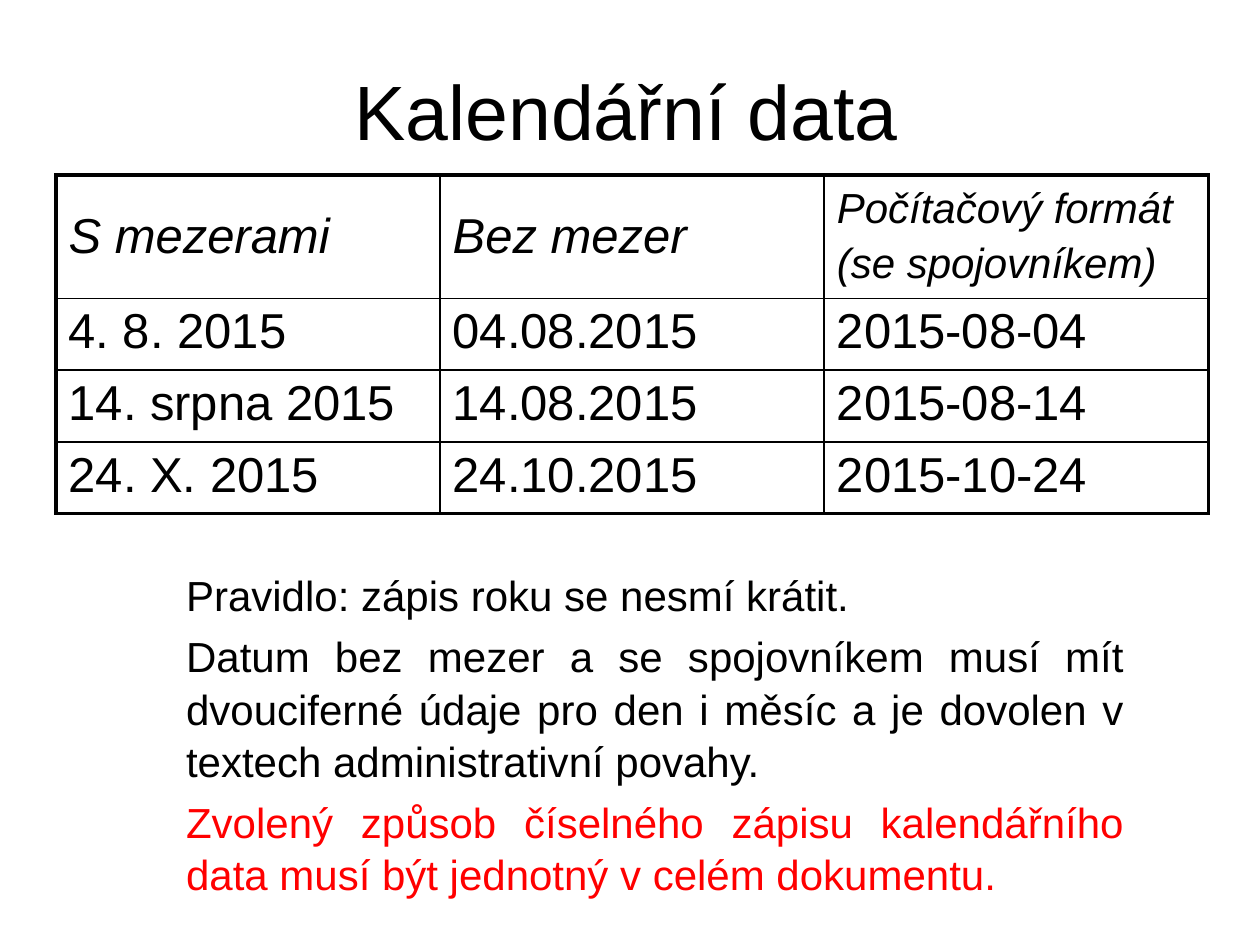
from pptx import Presentation
from pptx.dml.color import RGBColor
from pptx.enum.text import MSO_ANCHOR as Anchor, PP_ALIGN as Align
from pptx.oxml import parse_xml
from pptx.oxml.ns import nsdecls
from pptx.util import Pt

FONT = "Arial"
BLACK, RED = "000000", "FF0000"
THIN, THICK = 1, 2.25

HEADINGS = ["S mezerami", "Bez mezer", "Počítačový formát\n(se spojovníkem)"]
DATES = [
    ["4. 8. 2015", "04.08.2015", "2015-08-04"],
    ["14. srpna 2015", "14.08.2015", "2015-08-14"],
    ["24. X. 2015", "24.10.2015", "2015-10-24"],
]
RULES = [
    ("Pravidlo: zápis roku se nesmí krátit.", BLACK),
    ("Datum bez mezer a se spojovníkem musí mít dvouciferné údaje pro den "
     "i měsíc a je dovolen v textech administrativní povahy.", BLACK),
    ("Zvolený způsob číselného zápisu kalendářního data musí být jednotný "
     "v celém dokumentu.", RED),
]


def rgb(color):
    return RGBColor.from_string(color)


def style(paragraph, size, color=BLACK, align=Align.LEFT, italic=False, first=True):
    paragraph.alignment = align
    if not first:
        paragraph.space_before = Pt(0.2 * size)
    font = paragraph.font
    font.name, font.size, font.italic = FONT, Pt(size), italic
    font.color.rgb = rgb(color)


def set_borders(cell, widths):
    """Draw the left, right, top and bottom borders, in that order."""
    properties = cell._tc.get_or_add_tcPr()
    for index, (side, width) in enumerate(zip("LRTB", widths)):
        properties.insert(index, parse_xml(
            f'<a:ln{side} {nsdecls("a")} w="{Pt(width)}"><a:solidFill>'
            f'<a:srgbClr val="{BLACK}"/></a:solidFill></a:ln{side}>'))


def place_title(slide, left, top, width, height):
    title = slide.shapes.title
    title.left, title.top, title.width, title.height = map(Pt, (left, top, width, height))
    title.text_frame.text = "Kalendářní data"
    title.text_frame.vertical_anchor = Anchor.MIDDLE
    style(title.text_frame.paragraphs[0], 44, align=Align.CENTER)


def place_date_table(slide, left, top, width, height):
    rows = [HEADINGS] + DATES
    last_row, last_column = len(rows) - 1, len(HEADINGS) - 1
    date_height = 41
    table = slide.shapes.add_table(
        len(rows), len(HEADINGS), Pt(left), Pt(top), Pt(width), Pt(height)).table
    table.first_row = table.horz_banding = False
    for column in table.columns:
        column.width = Pt(width / len(HEADINGS))
    for r, texts in enumerate(rows):
        is_heading = r == 0
        table.rows[r].height = Pt(height - len(DATES) * date_height if is_heading
                                  else date_height)
        for c, text in enumerate(texts):
            cell = table.cell(r, c)
            cell.fill.background()
            cell.vertical_anchor = Anchor.MIDDLE if is_heading else Anchor.TOP
            cell.text = text
            size = 24 if "\n" in text else 28
            for index, paragraph in enumerate(cell.text_frame.paragraphs):
                style(paragraph, size, italic=is_heading, first=index == 0)
            outer = (c == 0, c == last_column, r == 0, r == last_row)
            set_borders(cell, [THICK if edge else THIN for edge in outer])


def place_rules(slide, left, top, width, height):
    frame = slide.shapes.add_textbox(Pt(left), Pt(top), Pt(width), Pt(height)).text_frame
    frame.word_wrap = True
    for index, (text, color) in enumerate(RULES):
        paragraph = frame.add_paragraph() if index else frame.paragraphs[0]
        paragraph.text = text
        paragraph.line_spacing = 1.04
        style(paragraph, 24, color, Align.JUSTIFY, first=index == 0)


def main():
    presentation = Presentation()
    presentation.slide_width, presentation.slide_height = Pt(720), Pt(540)
    slide = presentation.slides.add_slide(presentation.slide_layouts[5])
    slide.background.fill.solid()
    slide.background.fill.fore_color.rgb = rgb("FFFFFF")
    place_title(slide, 34, 26, 648, 73.5)
    place_date_table(slide, 32, 100, 658.5, 193.5)
    place_rules(slide, 99.25, 321, 550, 204.5)
    presentation.save("out.pptx")


if __name__ == "__main__":
    main()
